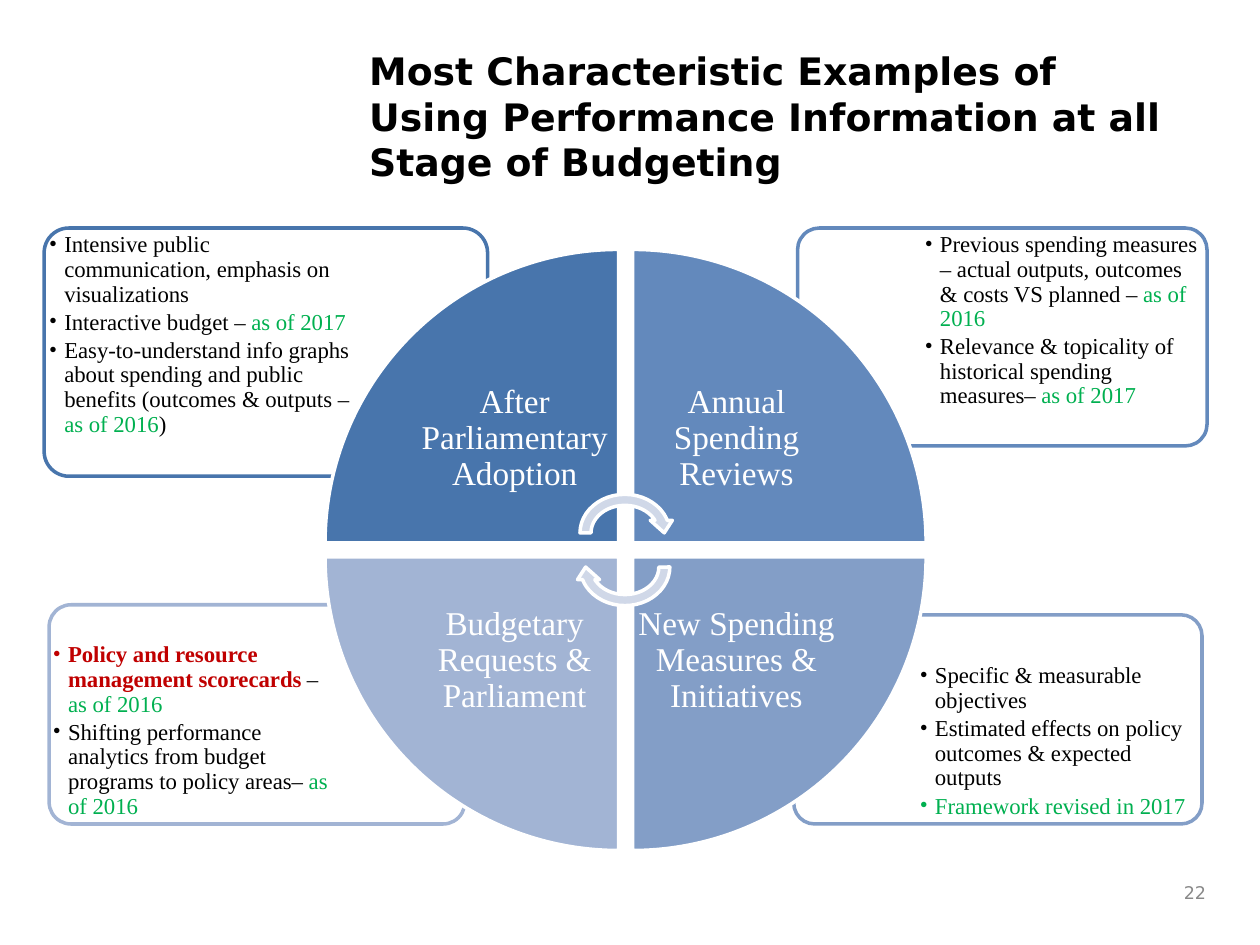
from lxml import etree
from pptx import Presentation
from pptx.dml.color import RGBColor
from pptx.enum.shapes import MSO_SHAPE
from pptx.enum.text import MSO_ANCHOR, MSO_AUTO_SIZE, PP_ALIGN
from pptx.oxml.ns import qn
from pptx.util import Inches, Pt

ROUNDED = MSO_SHAPE.ROUNDED_RECTANGLE
WEDGE = MSO_SHAPE.PIE_WEDGE
CIRCULAR_ARROW = MSO_SHAPE.CIRCULAR_ARROW
TOP, MIDDLE, BOTTOM = MSO_ANCHOR.TOP, MSO_ANCHOR.MIDDLE, MSO_ANCHOR.BOTTOM
LEFT, CENTER, RIGHT = PP_ALIGN.LEFT, PP_ALIGN.CENTER, PP_ALIGN.RIGHT
NO_FIT = MSO_AUTO_SIZE.NONE

BLACK = RGBColor(0x00, 0x00, 0x00)
WHITE = RGBColor(0xFF, 0xFF, 0xFF)
GRAY = RGBColor(0x89, 0x89, 0x89)
GREEN = RGBColor(0x00, 0xB0, 0x50)
RED = RGBColor(0xC0, 0x00, 0x00)
PALE_BLUE = RGBColor(0xD0, 0xD8, 0xE8)
ADOPTION_BLUE = RGBColor(0x48, 0x75, 0xAC)
REVIEW_BLUE = RGBColor(0x63, 0x89, 0xBC)
MEASURE_BLUE = RGBColor(0x83, 0x9E, 0xC7)
REQUEST_BLUE = RGBColor(0xA2, 0xB4, 0xD4)

SANS, SERIF = "DejaVu Sans", "Times New Roman"
WEDGE_SIZE, LABEL_SIZE = 2.33, 1.65
WEDGE_LEFT, WEDGE_RIGHT, WEDGE_TOP, WEDGE_BOTTOM = 2.58, 5.02, 1.98, 4.42

REVIEW_ITEMS = [
    [("Previous spending measures – actual outputs, outcomes & costs VS planned –", BLACK),
     (" as of 2016", GREEN)],
    [("Relevance & topicality of historical spending measures– ", BLACK), ("as of 2017", GREEN)],
]
MEASURE_ITEMS = [
    [("Specific & measurable objectives", BLACK)],
    [("Estimated effects on policy outcomes & expected outputs", BLACK)],
    [("Framework revised in 2017", GREEN)],
]
REQUEST_ITEMS = [
    [("Policy and resource management scorecards", RED), (" –", BLACK), (" as of 2016", GREEN)],
    [("Shifting performance analytics from budget programs to policy areas–", BLACK),
     (" as of 2016", GREEN)],
]
ADOPTION_ITEMS = [
    [("Intensive public communication, emphasis on visualizations", BLACK)],
    [("Interactive budget – ", BLACK), ("as of 2017", GREEN)],
    [("Easy-to-understand info graphs about spending and public benefits (outcomes & outputs – ", BLACK),
     ("as of 2016", GREEN), (")", BLACK)],
]

CARDS = [
    (MEASURE_BLUE, (6.3, 4.88, 3.24, 1.66), (7.3, 5.33, 2.19, 1.17), BOTTOM, MEASURE_ITEMS),
    (REQUEST_BLUE, (0.39, 4.8, 3.3, 1.74), (0.42, 5.27, 2.23, 1.23), BOTTOM, REQUEST_ITEMS),
    (REVIEW_BLUE, (6.33, 1.81, 3.25, 1.73), (7.34, 1.85, 2.2, 1.22), TOP, REVIEW_ITEMS),
    (ADOPTION_BLUE, (0.35, 1.81, 3.52, 1.97), (0.39, 1.85, 2.38, 1.39), TOP, ADOPTION_ITEMS),
]
STAGES = [
    ("After Parliamentary Adoption", ADOPTION_BLUE, WEDGE_LEFT, WEDGE_TOP),
    ("Annual Spending Reviews", REVIEW_BLUE, WEDGE_RIGHT, WEDGE_TOP),
    ("New Spending Measures & Initiatives", MEASURE_BLUE, WEDGE_RIGHT, WEDGE_BOTTOM),
    ("Budgetary Requests & Parliament", REQUEST_BLUE, WEDGE_LEFT, WEDGE_BOTTOM),
]


def apply(target, values):
    for name, value in values.items():
        setattr(target, name, value)


class SlideBuilder:
    def __init__(self, slide):
        self.slide = slide
        self.line_width = Pt(2)

    def place(self, shape, box):
        names = ("left", "top", "width", "height")
        apply(shape, dict(zip(names, map(Inches, box))))

    def frame(self, shape, anchor, margins=(0, 0)):
        side, end = map(Inches, margins)
        apply(shape.text_frame, {
            "word_wrap": True, "auto_size": NO_FIT, "vertical_anchor": anchor,
            "margin_left": side, "margin_right": side,
            "margin_top": end, "margin_bottom": end,
        })
        return shape.text_frame

    def styled_run(self, paragraph, text, font, size, color, bold=False):
        run = paragraph.add_run()
        run.text = text
        apply(run.font, {"name": font, "size": Pt(size), "bold": bold})
        run.font.color.rgb = color

    def title(self, text, box):
        shape = self.slide.shapes.title
        self.place(shape, box)
        paragraph = self.frame(shape, TOP, (0.1, 0.05)).paragraphs[0]
        paragraph.alignment = LEFT
        self.styled_run(paragraph, text, SANS, 21.6, BLACK, True)

    def label(self, text, box, font, size, color, alignment, spacing=1.0, margins=(0, 0)):
        shape = self.slide.shapes.add_textbox(*map(Inches, box))
        paragraph = self.frame(shape, MIDDLE, margins).paragraphs[0]
        apply(paragraph, {"alignment": alignment, "line_spacing": spacing})
        self.styled_run(paragraph, text, font, size, color)

    def shape(self, kind, box, fill, line, rotation=0):
        shape = self.slide.shapes.add_shape(kind, *map(Inches, box))
        shape.shadow.inherit = False
        shape.rotation = rotation
        shape.fill.solid()
        shape.fill.fore_color.rgb = fill
        shape.line.color.rgb = line
        shape.line.width = self.line_width
        return shape

    def card(self, box, line):
        shape = self.shape(ROUNDED, box, WHITE, line)
        shape.adjustments[0] = 0.1
        color = shape.element.spPr.find(qn("a:solidFill"))[0]
        etree.SubElement(color, qn("a:alpha"), val="90000")

    def bullets(self, placeholder, box, anchor, items):
        self.place(placeholder, box)
        self.slide.shapes.element.append(placeholder.element)
        text_frame = self.frame(placeholder, anchor)
        for index, item in enumerate(items):
            paragraph = text_frame.add_paragraph() if index else text_frame.paragraphs[0]
            properties = paragraph._p.get_or_add_pPr()
            properties.set("marL", str(Inches(0.12)))
            properties.set("indent", str(Inches(-0.12)))
            etree.SubElement(properties, qn("a:buFont"), typeface=SERIF)
            etree.SubElement(properties, qn("a:buChar"), char="•")
            apply(paragraph, {
                "level": 1, "alignment": LEFT, "line_spacing": 0.9,
                "space_before": Pt(0), "space_after": Pt(2),
            })
            for text, color in item:
                self.styled_run(paragraph, text, SERIF, 13, color, color == RED)


def main():
    presentation = Presentation()
    presentation.slide_width, presentation.slide_height = Inches(10), Inches(7.5)
    comparison_layout = presentation.slide_layouts[4]
    slide = presentation.slides.add_slide(comparison_layout)
    builder = SlideBuilder(slide)

    builder.title("Most Characteristic Examples of Using Performance Information "
                  "at all Stage of Budgeting", (2.83, 0.33, 6.67, 1.17))
    builder.label("22", (9.2, 6.92, 0.47, 0.33), SANS, 10, GRAY, RIGHT, margins=(0.1, 0.05))

    bodies = list(slide.placeholders)[1:]
    for body, (color, card_box, list_box, anchor, items) in zip(bodies, CARDS):
        builder.card(card_box, color)
        builder.bullets(body, list_box, anchor, items)

    inset = WEDGE_SIZE - LABEL_SIZE
    for index, (text, color, left, top) in enumerate(STAGES):
        builder.shape(WEDGE, (left, top, WEDGE_SIZE, WEDGE_SIZE), color, WHITE, 90 * index)
        label_left = left + inset if left == WEDGE_LEFT else left
        label_top = top + inset if top == WEDGE_TOP else top
        builder.label(text, (label_left, label_top, LABEL_SIZE, LABEL_SIZE),
                      SERIF, 19, WHITE, CENTER, 0.9)

    for top, rotation in ((3.88, 0), (4.15, 180)):
        builder.shape(CIRCULAR_ARROW, (4.56, top, 0.8, 0.7), PALE_BLUE, WHITE, rotation)

    presentation.save("out.pptx")


if __name__ == "__main__":
    main()
